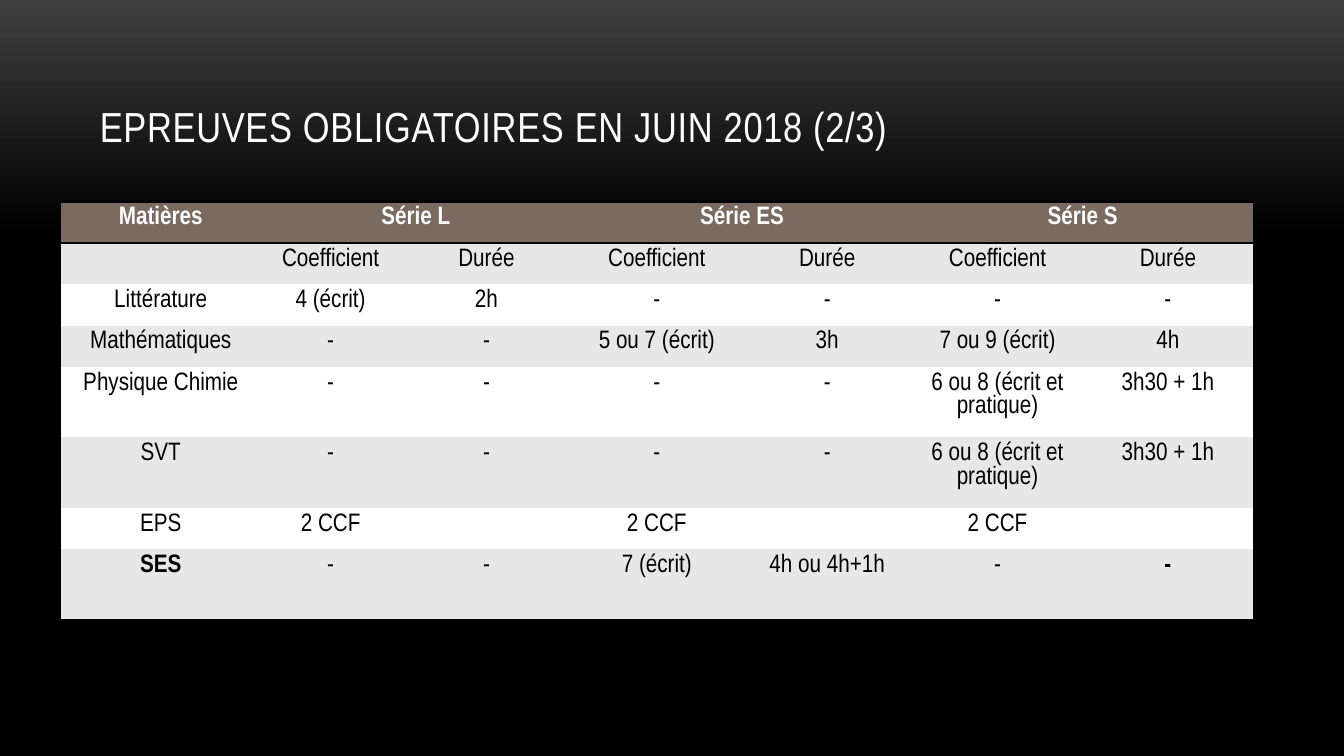
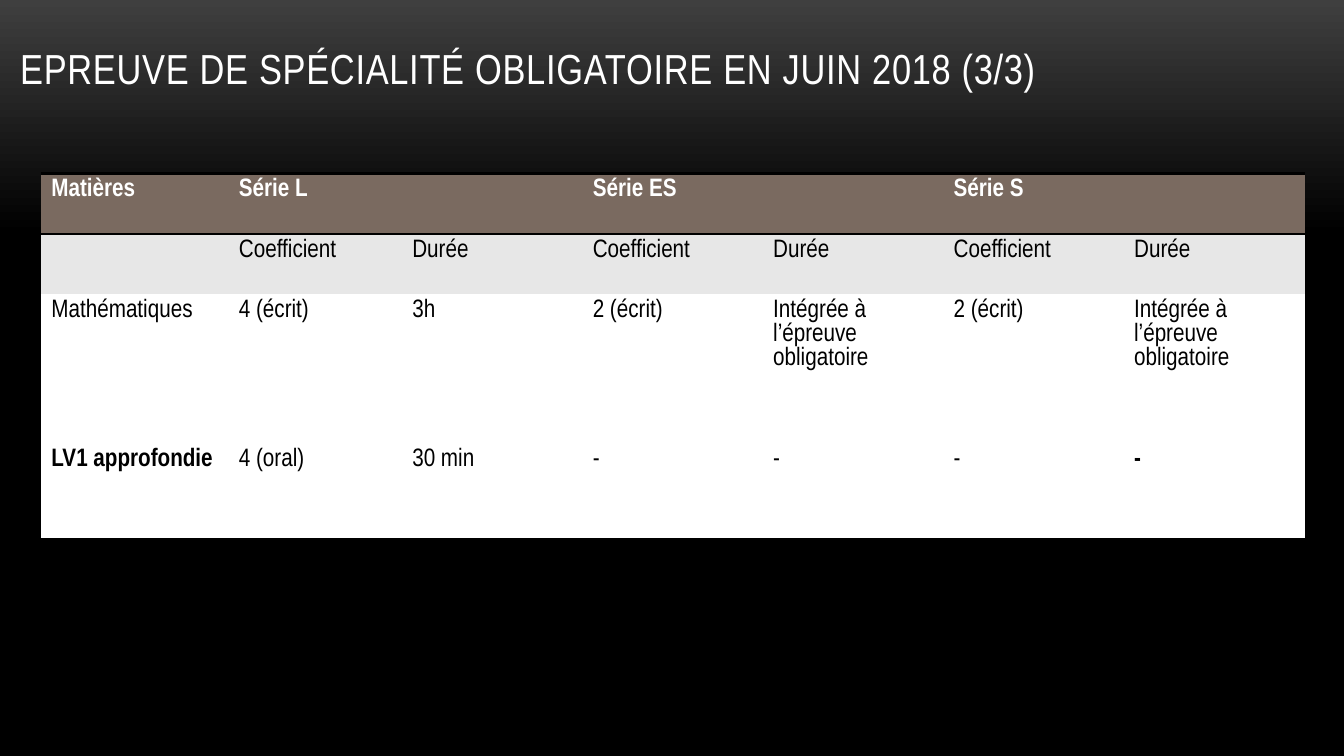
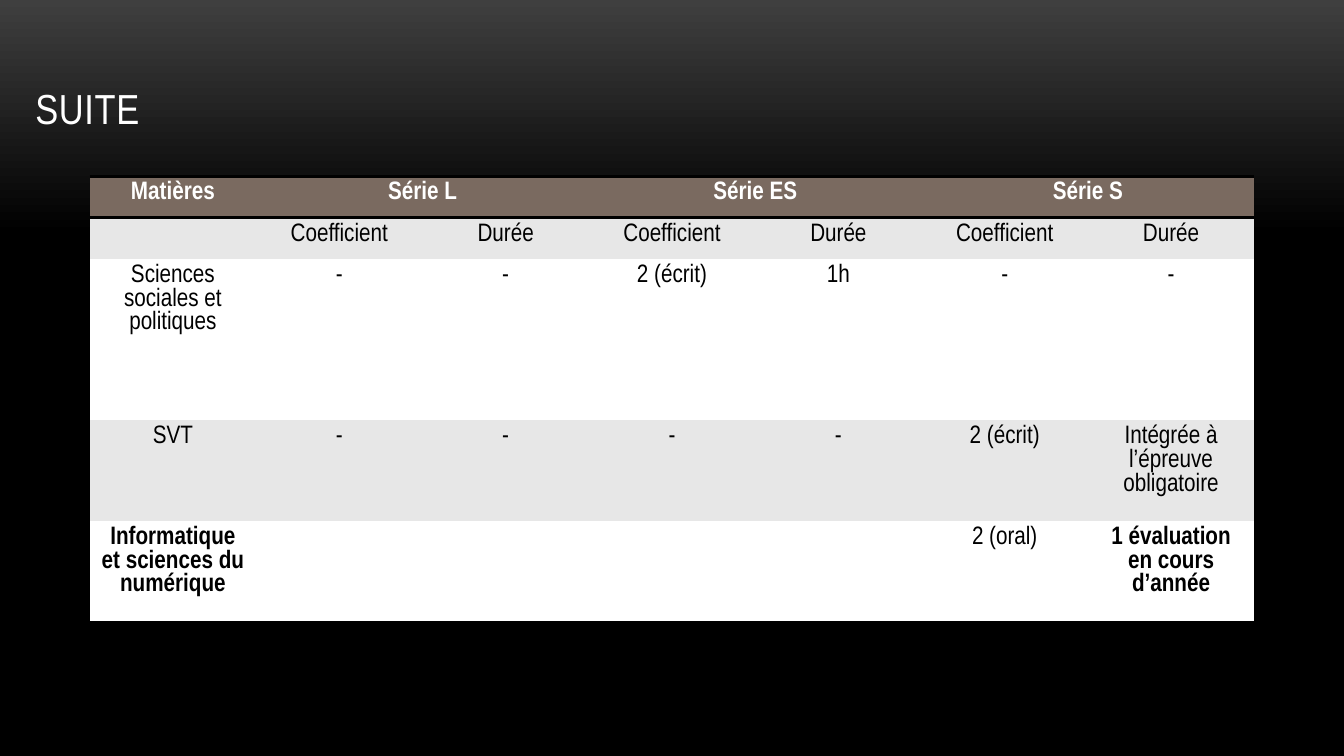
from lxml import etree
from pptx import Presentation
from pptx.dml.color import RGBColor
from pptx.enum.text import MSO_ANCHOR, MSO_AUTO_SIZE, PP_ALIGN
from pptx.oxml.ns import qn
from pptx.util import Inches, Pt

COLORS = {
    "top": "3F3F3F",
    "black": "000000",
    "white": "FFFFFF",
    "header": "7A6A60",
    "band": "E7E7E7",
}
FONT = "Arial Narrow"
NO_STYLE = "{2D5ABB26-0587-4C30-8999-92F81FD0307C}"
SERIES = ["Matières", "Série L", "", "Série ES", "", "Série S", ""]
MEASURES = [""] + ["Coefficient", "Durée"] * 3
INTEGRATED = "Intégrée à l’épreuve obligatoire"
PRACTICAL = ["6 ou 8 (écrit et pratique)", "3h30 + 1h"]


def rgb(name):
    return RGBColor.from_string(COLORS[name])


def set_background(master):
    fill = master.background.fill
    fill.gradient()
    fill.gradient_angle = 270
    for stop, position, color in zip(fill.gradient_stops, (0, 0.31), ("top", "black")):
        stop.position = position
        stop.color.rgb = rgb(color)


def style_font(font, size, color, bold=False):
    font.name = FONT
    font.size = Pt(size)
    font.bold = bold
    font.color.rgb = rgb(color)


def add_title(slide, text, box):
    sp = slide.shapes.title
    sp.left, sp.top, sp.width, sp.height = [Inches(v) for v in box]
    tf = sp.text_frame
    tf.text = text
    tf.word_wrap = True
    tf.auto_size = MSO_AUTO_SIZE.NONE
    tf.vertical_anchor = MSO_ANCHOR.BOTTOM
    p = tf.paragraphs[0]
    p.alignment = PP_ALIGN.LEFT
    style_font(p.font, 30, "white")
    p.runs[0].font._element.set("spc", "50")


def add_border(cell, sides):
    tcPr = cell._tc.get_or_add_tcPr()
    for index, side in enumerate(sides):
        ln = etree.Element(qn(f"a:ln{side}"), w=str(Pt(2)))
        fill = etree.SubElement(ln, qn("a:solidFill"))
        etree.SubElement(fill, qn("a:srgbClr"), val=COLORS["black"])
        tcPr.insert(index, ln)


def fill_cell(cell, text, color, text_color, bold, align):
    cell.fill.solid()
    cell.fill.fore_color.rgb = rgb(color)
    p = cell.text_frame.paragraphs[0]
    p.alignment = align
    if text:
        p.add_run().text = text
    style_font(p.font, 18, text_color, bold)


def add_exam_table(slide, left, top, widths, heights, subjects, bands, align):
    rows = [SERIES, MEASURES] + subjects
    frame = slide.shapes.add_table(
        len(rows), len(widths), Inches(left), Inches(top),
        Inches(sum(widths)), Inches(sum(heights)))
    table = frame.table
    table._tbl.tblPr.find(qn("a:tableStyleId")).text = NO_STYLE
    table.first_row = table.horz_banding = False
    for column, width in zip(table.columns, widths):
        column.width = Inches(width)
    last_row, last_col = len(rows) - 1, len(widths) - 1
    for r, (texts, height, color) in enumerate(zip(rows, heights, ["header"] + bands)):
        table.rows[r].height = Inches(height)
        for c, text in enumerate(texts):
            cell = table.cell(r, c)
            is_header = r == 0
            bold = is_header or (r == last_row and c in (0, last_col))
            fill_cell(cell, text, color, "white" if is_header else "black", bold, align)
            if is_header:
                add_border(cell, "TB")
            elif r == last_row:
                add_border(cell, "B")
    for c in range(1, last_col, 2):
        table.cell(0, c).merge(table.cell(0, c + 1))


def add_exam_slide(prs, title, title_box, **table):
    slide = prs.slides.add_slide(prs.slide_layouts[5])
    add_title(slide, title, title_box)
    add_exam_table(slide, **table)


def main():
    prs = Presentation()
    prs.slide_width, prs.slide_height = Inches(13.33), Inches(7.5)
    set_background(prs.slide_master)

    add_exam_slide(
        prs, "EPREUVES OBLIGATOIRES EN JUIN 2018 (2/3)", (0.89, 0.3, 11.56, 1.25),
        left=0.61, top=2, widths=[1.97, 1.4] + [1.69] * 5,
        heights=[0.41] * 4 + [0.7, 0.7, 0.41, 0.7],
        subjects=[
            ["Littérature", "4 (écrit)", "2h"] + ["-"] * 4,
            ["Mathématiques", "-", "-", "5 ou 7 (écrit)", "3h", "7 ou 9 (écrit)", "4h"],
            ["Physique Chimie"] + ["-"] * 4 + PRACTICAL,
            ["SVT"] + ["-"] * 4 + PRACTICAL,
            ["EPS"] + ["2 CCF", ""] * 3,
            ["SES", "-", "-", "7 (écrit)", "4h ou 4h+1h", "-", "-"],
        ],
        bands=["band", "white"] * 3 + ["band"], align=PP_ALIGN.CENTER)

    add_exam_slide(
        prs, "EPREUVE DE SPÉCIALITÉ OBLIGATOIRE EN JUIN 2018 (3/3)", (0.1, 0, 10.98, 0.97),
        left=0.41, top=1.72, widths=[1.86, 1.72] + [1.79] * 5,
        heights=[0.6, 0.6, 1.48, 0.95],
        subjects=[
            ["Mathématiques", "4 (écrit)", "3h"] + ["2 (écrit)", INTEGRATED] * 2,
            ["LV1 approfondie", "4 (oral)", "30 min"] + ["-"] * 4,
        ],
        bands=["band", "white", "white"], align=PP_ALIGN.LEFT)

    add_exam_slide(
        prs, "SUITE", (0.25, 0.12, 11.56, 1.25),
        left=0.89, top=1.75, widths=[1.65] * 7, heights=[0.41, 0.41, 1.6, 1, 1],
        subjects=[
            ["Sciences sociales et politiques", "-", "-", "2 (écrit)", "1h", "-", "-"],
            ["SVT"] + ["-"] * 4 + ["2 (écrit)", INTEGRATED],
            ["Informatique et sciences du numérique"] + [""] * 4
            + ["2 (oral)", "1 évaluation en cours d’année"],
        ],
        bands=["band", "white"] * 2, align=PP_ALIGN.CENTER)

    prs.save("out.pptx")


if __name__ == "__main__":
    main()
